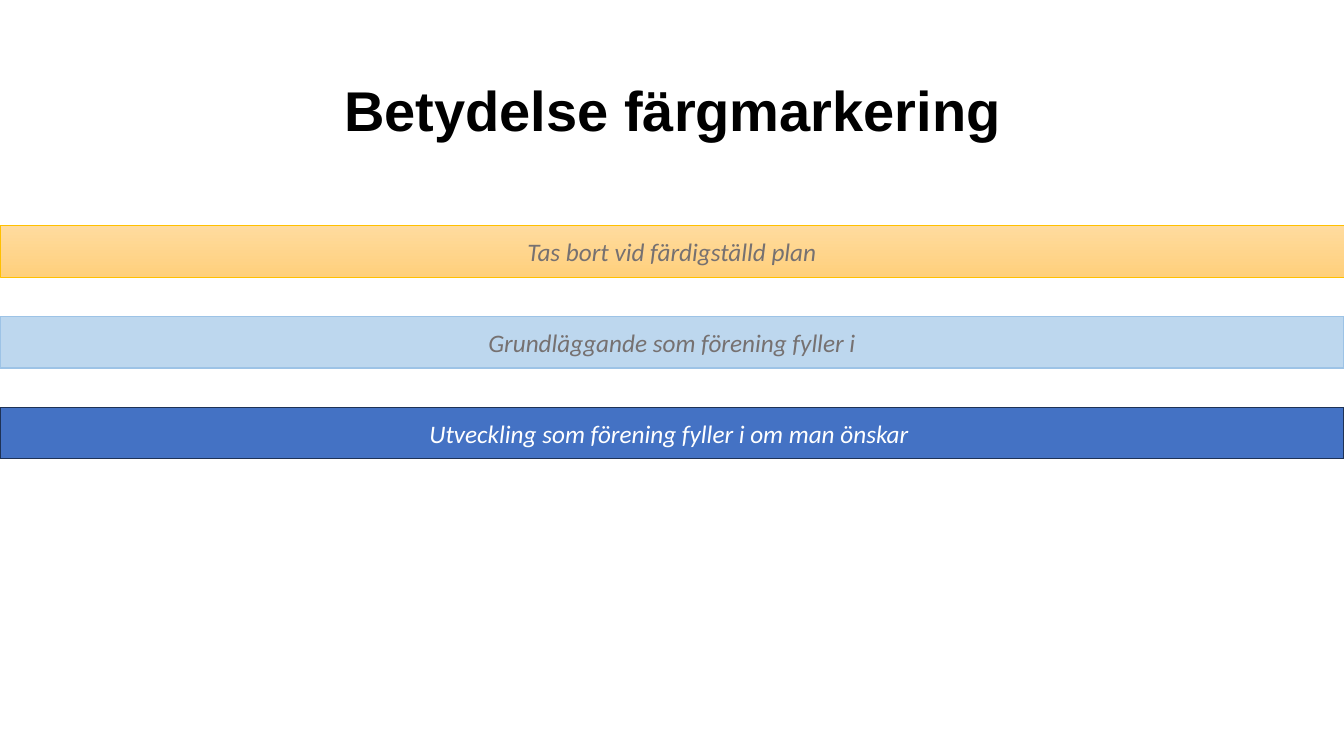
from pptx import Presentation
from pptx import util as u
from pptx.dml.color import RGBColor
from pptx.enum import shapes, text

SLIDE_WIDTH, SLIDE_HEIGHT = 13.33, 7.5
BAR_TOP, BAR_HEIGHT, BAR_STEP = 2.24, 0.51, 0.9

# Label, fill colours (two make a gradient), line colour, line width, text colour
BARS = [
    ("Tas bort vid färdigställd plan", ["FFDB9E", "FFD07C"], "FFC000", 0.5, "767171"),
    ("Grundläggande som förening fyller i", ["BDD7EE"], "9DC3E6", 1, "767171"),
    ("Utveckling som förening fyller i om man önskar ", ["4472C4"], "1E3256", 1, "FFFFFF"),
]


def colour(value):
    return RGBColor.from_string(value)


def write_text(box, words, text_colour, line_spacing=1.0, **font_format):
    """Write one centred paragraph in the middle of a box."""
    frame = box.text_frame
    frame.word_wrap = True
    frame.vertical_anchor = text.MSO_ANCHOR.MIDDLE
    para = frame.paragraphs[0]
    para.alignment = text.PP_ALIGN.CENTER
    para.line_spacing = line_spacing
    span = para.add_run()
    span.text = words
    span.font.color.rgb = colour(text_colour)
    for name, value in font_format.items():
        setattr(span.font, name, value)


def fill_shape(shape, fills):
    """Fill with one colour, or with a gradient from top to bottom."""
    if len(fills) == 1:
        shape.fill.solid()
        shape.fill.fore_color.rgb = colour(fills[0])
        return
    shape.fill.gradient()
    shape.fill.gradient_angle = 270
    for stop, value in zip(shape.fill.gradient_stops, fills):
        stop.color.rgb = colour(value)


def add_title(page, words):
    box = page.shapes.add_textbox(
        u.Inches(0.92), u.Inches(0.4), u.Inches(11.5), u.Inches(1.45))
    write_text(box, words, "000000", line_spacing=0.9,
               name="Arial", size=u.Pt(40), bold=True)


def add_bar(page, top, label, fills, line_colour, line_width, text_colour):
    bar = page.shapes.add_shape(
        shapes.MSO_SHAPE.RECTANGLE, 0, u.Inches(top),
        u.Inches(SLIDE_WIDTH), u.Inches(BAR_HEIGHT))
    bar.shadow.inherit = False
    fill_shape(bar, fills)
    bar.line.color.rgb = colour(line_colour)
    bar.line.width = u.Pt(line_width)
    write_text(bar, label, text_colour,
               name="Calibri", size=u.Pt(18), italic=True)


def main():
    deck = Presentation()
    deck.slide_width = u.Inches(SLIDE_WIDTH)
    deck.slide_height = u.Inches(SLIDE_HEIGHT)
    page = deck.slides.add_slide(deck.slide_layouts[6])

    # Colour bars, evenly spaced
    for index, bar in enumerate(BARS):
        add_bar(page, BAR_TOP + index * BAR_STEP, *bar)

    # Heading
    add_title(page, "Betydelse färgmarkering")

    deck.save("out.pptx")


if __name__ == "__main__":
    main()
